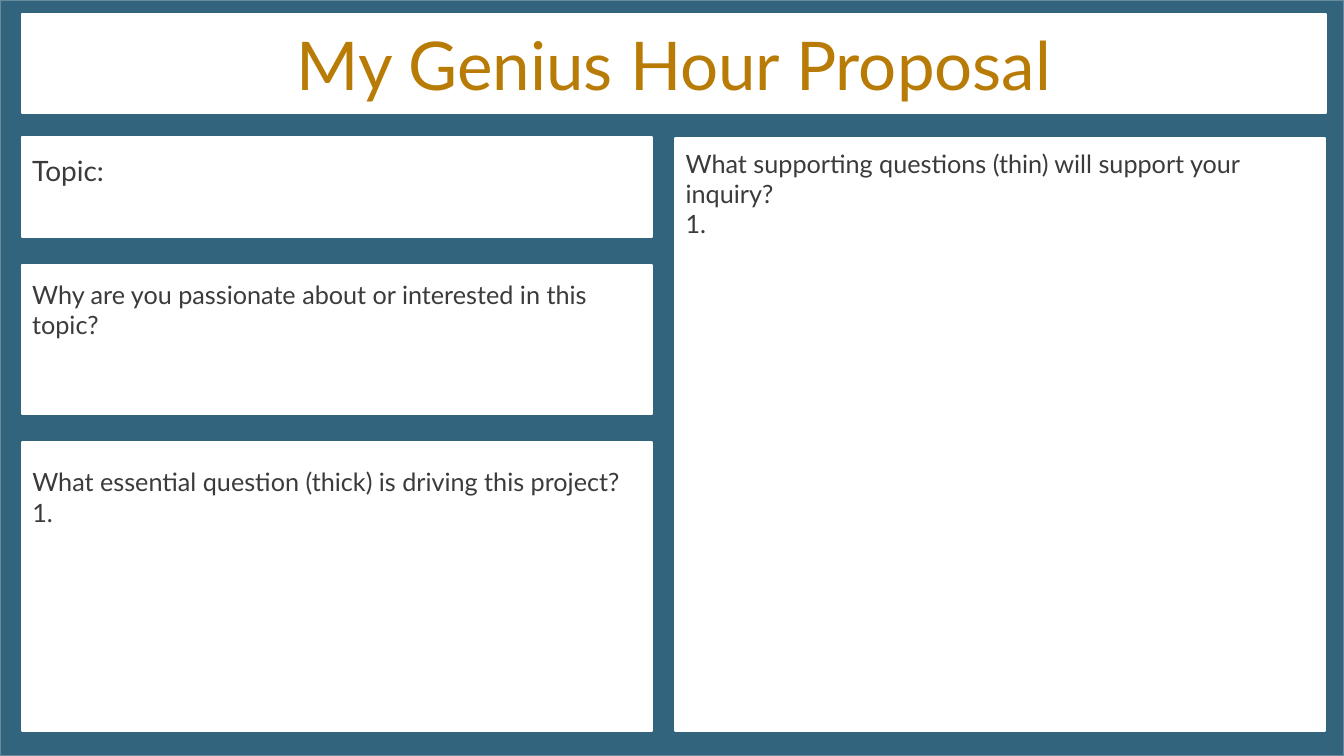
"""Build the Genius Hour proposal slide with its title banner and four answer panels."""
from dataclasses import dataclass

from lxml.etree import SubElement
from pptx import Presentation
from pptx.dml.color import RGBColor
from pptx.enum.shapes import MSO_SHAPE as Preset
from pptx.enum.text import MSO_ANCHOR as Anchor, MSO_AUTO_SIZE as AutoSize, PP_ALIGN as Align
from pptx.oxml.ns import qn
from pptx.util import Inches, Pt


@dataclass(frozen=True)
class Theme:
    face: str = "Lato"
    teal: RGBColor = RGBColor(0x32, 0x64, 0x7E)
    edge: RGBColor = RGBColor(0x69, 0x8A, 0x9B)
    paper: RGBColor = RGBColor(0xFF, 0xFF, 0xFF)
    gold: RGBColor = RGBColor(0xB8, 0x7B, 0x06)
    ink: RGBColor = RGBColor(0x3B, 0x3B, 0x3B)
    title_size: int = 48
    topic_size: int = 20
    question_size: int = 18


theme = Theme()


def paint(panel, fill, line):
    panel.shadow.inherit = False
    panel.fill.solid()
    panel.fill.fore_color.rgb = fill
    panel.line.color.rgb = line
    panel.line.width = Pt(1.5)


def write(paragraph, text, size, color, align=Align.LEFT, numbered=False):
    paragraph.text = text
    paragraph.alignment = align
    paragraph.space_before = Pt(0)
    properties = paragraph._p.get_or_add_pPr()
    indent = Inches(0.38) if numbered else 0
    properties.set("marL", str(indent))
    properties.set("indent", str(-indent))
    if numbered:
        SubElement(properties, qn("a:buFont"), typeface=theme.face)
        SubElement(properties, qn("a:buAutoNum"), type="arabicPeriod")
    else:
        SubElement(properties, qn("a:buNone"))
    paragraph.font.name = theme.face
    paragraph.font.size = Pt(size)
    paragraph.font.color.rgb = color


deck = Presentation()
deck.slide_width, deck.slide_height = Inches(13.33), Inches(7.5)
slide = deck.slides.add_slide(deck.slide_layouts[3])
title, essential, supporting = slide.placeholders

backdrop = slide.shapes.add_shape(Preset.RECTANGLE, 0, 0, deck.slide_width, deck.slide_height)
paint(backdrop, theme.teal, theme.edge)
slide.shapes.element.insert(2, backdrop.element)

topic, passion = (slide.shapes.add_shape(Preset.RECTANGLE, 0, 0, 0, 0) for _ in range(2))

panels = [
    (title, 0.22, 0.14, 12.93, 0.98, 0.05, ["My Genius Hour Proposal"], theme.title_size),
    (topic, 0.22, 1.36, 6.25, 0.99, 0.16, ["Topic:"], theme.topic_size),
    (passion, 0.22, 2.63, 6.25, 1.48, 0.14,
     ["Why are you passionate about or interested in this topic?"], theme.question_size),
    (essential, 0.22, 4.39, 6.25, 2.86, 0.24,
     ["What essential question (thick) is driving this project?", " "], theme.question_size),
    (supporting, 6.7, 1.37, 6.44, 5.88, 0.1,
     ["What supporting questions (thin) will support your inquiry?", " "], theme.question_size),
]
for panel, left, top, width, height, inset, lines, size in panels:
    panel.left, panel.top = Inches(left), Inches(top)
    panel.width, panel.height = Inches(width), Inches(height)
    paint(panel, theme.paper, theme.paper)
    frame = panel.text_frame
    frame.word_wrap = True
    frame.auto_size = AutoSize.NONE
    frame.margin_top = Inches(inset)
    is_title = panel is title
    frame.vertical_anchor = Anchor.MIDDLE if is_title else Anchor.TOP
    for number, line in enumerate(lines):
        paragraph = frame.add_paragraph() if number else frame.paragraphs[0]
        write(paragraph, line, size, theme.gold if is_title else theme.ink,
              Align.CENTER if is_title else Align.LEFT, numbered=number > 0)

deck.save("out.pptx")
